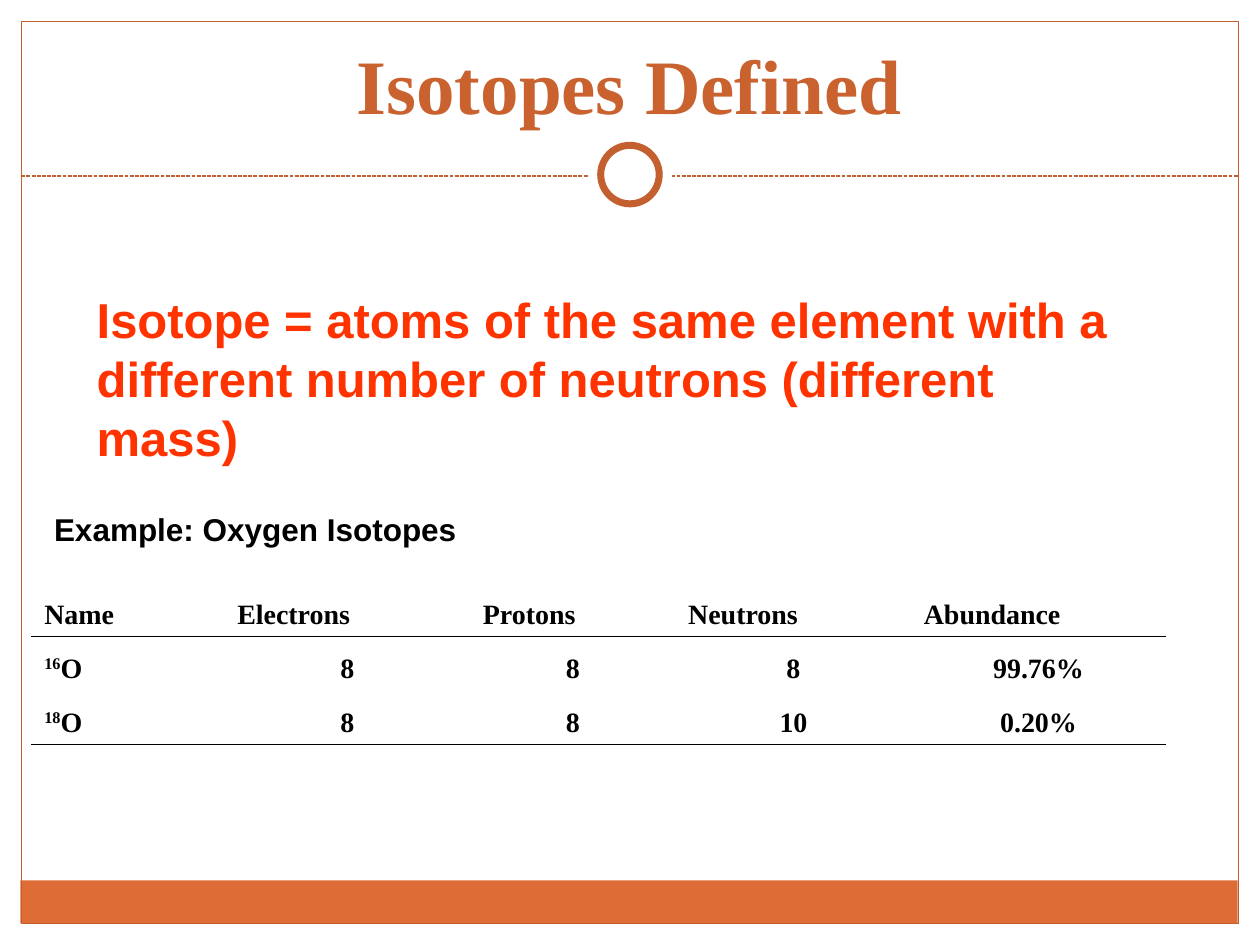
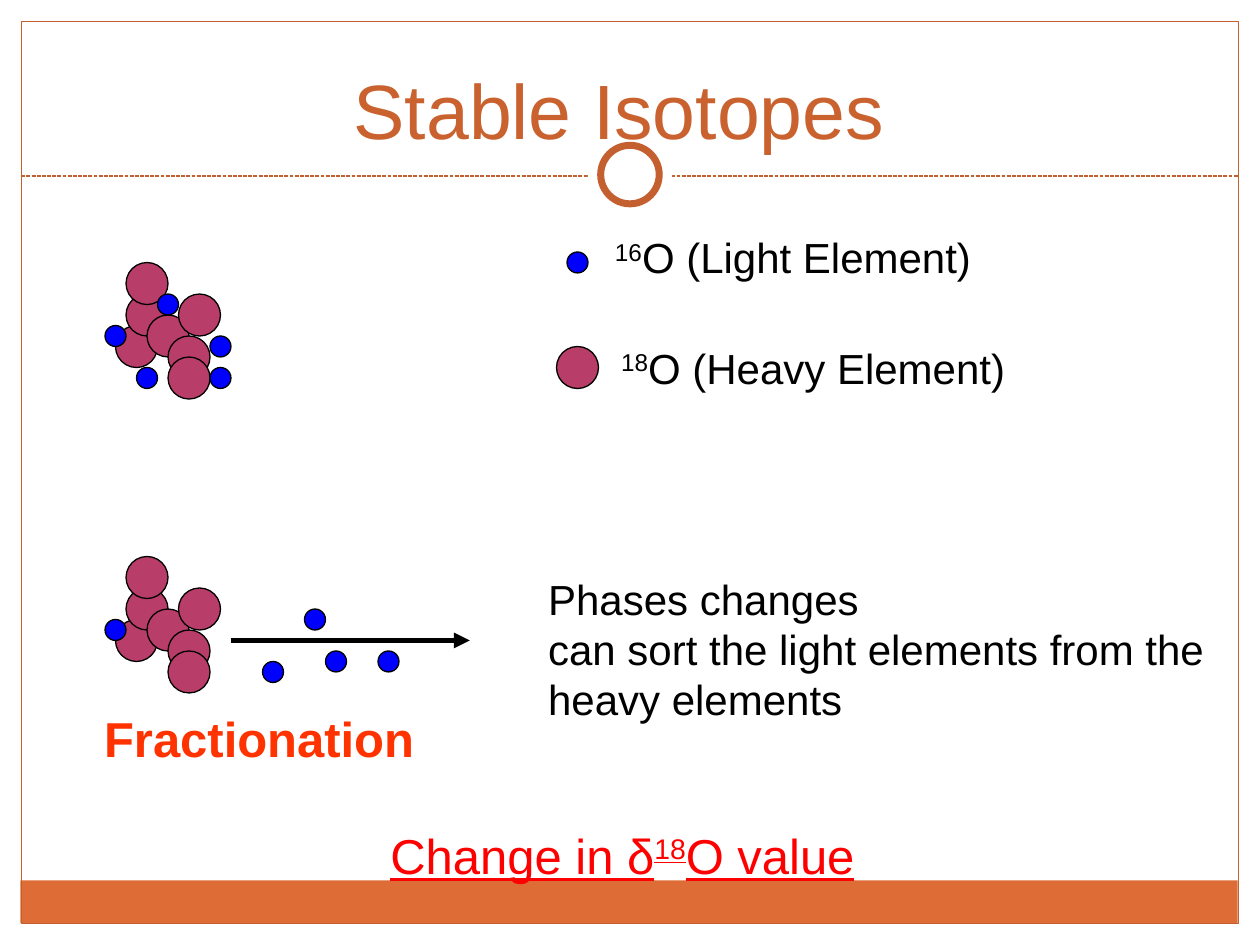
"""Build two slides on isotopes: a definition with a table, and a fractionation diagram."""
from lxml.etree import SubElement
from pptx import Presentation
from pptx.dml.color import RGBColor
from pptx.enum.dml import MSO_LINE
from pptx.enum.shapes import MSO_CONNECTOR, MSO_SHAPE
from pptx.enum.text import MSO_ANCHOR as Anchor, MSO_AUTO_SIZE as AutoSize, PP_ALIGN as Align
from pptx.oxml import parse_xml
from pptx.oxml.ns import nsdecls, qn
from pptx.util import Cm, Pt

COLORS = {
    "paper": "FFFFFF", "ink": "000000", "band": "DE6C36", "frame": "C45F30",
    "title": "C9622F", "key": "FF3300", "change": "FF0000",
    "heavy": "B83D68", "light": "0000FF",
}
SANS, SERIF = "Arial", "Times New Roman"

O16 = [("16", True), ("O", False)]
O18 = [("18", True), ("O", False)]

DEFINITION = "Isotope = atoms of the same element with a different number of neutrons (different mass)"
EXAMPLE = "Example: Oxygen Isotopes"
ISOTOPES = [
    ["Name", "Electrons", "Protons", "Neutrons", "Abundance"],
    [O16, "8", "8", "8", "99.76%"],
    [O18, "8", "8", "10", "0.20%"],
]
COLUMN_WIDTHS = [3.89, 4.95, 4.14, 4.75, 5.13]
ROW_HEIGHTS = [1.83, 1.09, 1.09]

LIGHT_LABEL = [(" 16", True), ("O (Light Element)", False)]
HEAVY_LABEL = [("18", True), ("O (Heavy Element)", False)]
PHASES = ["Phases changes", "can sort the light elements from the", "heavy elements"]
CHANGE = [("Change in δ", False), ("18", True), ("O value", False)]

GRID = Cm(2.54) / 12
ATOM_SIZES = {"heavy": 4, "light": 2}
HEAVY_CLUSTER = [(1, 6), (2, 3), (4, 5), (6, 7), (2, 0), (7, 3), (6, 9)]
MIXED_LIGHT = [(5, 3), (3, 10), (0, 6), (10, 7), (10, 10)]
SORTED_LIGHT = [(26, 9), (21, 9), (0, 6), (19, 5), (15, 10)]
CLUSTERS = [((10, 25), MIXED_LIGHT), ((10, 53), SORTED_LIGHT)]
LEGEND = [("light", 54, 24), ("heavy", 53, 33)]


def rgb(name):
    return RGBColor.from_string(COLORS[name])


def cm(*lengths):
    return [Cm(length) for length in lengths]


def write(frame, paragraphs, size, color="ink", font=SANS, bold=False, underline=None, align=Align.LEFT):
    for index, content in enumerate(paragraphs):
        paragraph = frame.add_paragraph() if index else frame.paragraphs[0]
        paragraph.alignment = align
        runs = [(content, False)] if isinstance(content, str) else content
        for text, raised in runs:
            run = paragraph.add_run()
            run.text = text
            run.font.size, run.font.name = Pt(size), font
            run.font.bold, run.font.underline = bold, underline
            run.font.color.rgb = rgb(color)
            if raised:
                run.font._element.set("baseline", "30000")


def add_label(slide, box, paragraphs, size, wrap=False, **style):
    frame = slide.shapes.add_textbox(*cm(*box)).text_frame
    frame.word_wrap = wrap
    frame.auto_size = AutoSize.SHAPE_TO_FIT_TEXT
    write(frame, paragraphs, size, **style)


def add_figure(slide, preset, box, fill=None, line=None, width=0.75):
    figure = slide.shapes.add_shape(preset, *box)
    figure.shadow.inherit = False
    if fill:
        figure.fill.solid()
        figure.fill.fore_color.rgb = rgb(fill)
    else:
        figure.fill.background()
    if line:
        figure.line.color.rgb = rgb(line)
        figure.line.width = Pt(width)
    else:
        figure.line.fill.background()
    return figure


def add_line(slide, ends, color, width, dash=None, arrow=False):
    line = slide.shapes.add_connector(MSO_CONNECTOR.STRAIGHT, *cm(*ends))
    line.line.color.rgb = rgb(color)
    line.line.width = Pt(width)
    if dash:
        line.line.dash_style = dash
    properties = line.element.spPr
    if arrow:
        SubElement(properties.get_or_add_ln(), qn("a:tailEnd"), type="triangle")
    SubElement(properties, qn("a:effectLst"))
    return line


def add_backdrop(slide, layout):
    for placeholder in list(layout.placeholders)[1:]:
        layout.shapes.element.remove(placeholder.element)
    parts = [
        add_figure(slide, MSO_SHAPE.RECTANGLE, cm(0.41, 17.75, 24.54, 0.86), fill="band"),
        add_figure(slide, MSO_SHAPE.RECTANGLE, cm(0.43, 0.43, 24.54, 18.19), line="frame"),
        add_line(slide, (0.43, 3.55, 24.97, 3.55), "frame", 0.75, dash=MSO_LINE.SQUARE_DOT),
        add_figure(slide, MSO_SHAPE.OVAL, cm(11.85, 2.67, 1.7, 1.7), fill="paper"),
        add_figure(slide, MSO_SHAPE.OVAL, cm(12.11, 2.93, 1.18, 1.18), "paper", "frame", 4),
    ]
    for part in parts:
        layout.shapes.element.append(part.element)


def set_title(slide, text, box, anchor, **style):
    title = slide.shapes.title
    title.left, title.top, title.width, title.height = cm(*box)
    frame = title.text_frame
    frame.auto_size = AutoSize.NONE
    frame.vertical_anchor = anchor
    write(frame, [text], 44, "title", align=Align.CENTER, **style)


def rule_cell(cell, side):
    rule = parse_xml(
        f'<a:{side} {nsdecls("a")} w="12700"><a:solidFill>'
        f'<a:srgbClr val="{COLORS["ink"]}"/></a:solidFill></a:{side}>')
    cell._tc.get_or_add_tcPr().insert(0, rule)


def add_isotope_table(slide):
    box = cm(0.64, 11, sum(COLUMN_WIDTHS), sum(ROW_HEIGHTS))
    table = slide.shapes.add_table(len(ISOTOPES), len(COLUMN_WIDTHS), *box).table
    table.first_row = table.horz_banding = False
    for column, width in zip(table.columns, COLUMN_WIDTHS):
        column.width = Cm(width)
    for r, (values, height) in enumerate(zip(ISOTOPES, ROW_HEIGHTS)):
        table.rows[r].height = Cm(height)
        for c, value in enumerate(values):
            cell = table.cell(r, c)
            cell.fill.background()
            cell.vertical_anchor = Anchor.BOTTOM
            align = Align.CENTER if r and c else Align.LEFT
            write(cell.text_frame, [value], 16, font=SERIF, bold=True, align=align)
            rule_cell(cell, "lnT" if r == 1 else "lnB")


def add_atom(slide, kind, column, row):
    size = ATOM_SIZES[kind]
    box = [round(GRID * units) for units in (column, row, size, size)]
    add_figure(slide, MSO_SHAPE.OVAL, box, kind, "ink")


def build_definition(slide):
    set_title(slide, "Isotopes Defined", (0.84, 0.64, 23.7, 2.11), Anchor.BOTTOM, font=SERIF, bold=True)
    add_isotope_table(slide)
    add_label(slide, (1.7, 5.72, 21.59, 3.81), [DEFINITION], 28, wrap=True, color="key", bold=True)
    add_label(slide, (0.84, 10.16, 8.89, 1.02), [EXAMPLE], 18, wrap=True, bold=True)


def build_fractionation(slide):
    set_title(slide, "Stable Isotopes ", (1.27, 0.61, 22.86, 3.18), Anchor.MIDDLE)
    for (left, top), light_atoms in CLUSTERS:
        for kind, atoms in (("heavy", HEAVY_CLUSTER), ("light", light_atoms)):
            for x, y in atoms:
                add_atom(slide, kind, left + x, top + y)
    add_line(slide, (4.65, 12.91, 9.47, 12.91), "ink", 3, arrow=True)
    for kind, column, row in LEGEND:
        add_atom(slide, kind, column, row)
    add_label(slide, (12.01, 4.55, 7.92, 1.27), [LIGHT_LABEL], 24)
    add_label(slide, (12.27, 6.78, 8.33, 1.27), [HEAVY_LABEL], 24)
    add_label(slide, (10.8, 11.43, 13.87, 3.33), PHASES, 24)
    add_label(slide, (1.85, 14.15, 6.76, 1.45), ["Fractionation"], 28, color="key", bold=True)
    add_label(slide, (7.62, 16.51, 10.8, 1.45), [CHANGE], 28, wrap=True, color="change", underline=True)


def main():
    deck = Presentation()
    deck.slide_width, deck.slide_height = cm(25.4, 19.05)
    layout = deck.slide_layouts[5]
    definition, fractionation = (deck.slides.add_slide(layout) for _ in range(2))
    add_backdrop(definition, layout)
    build_definition(definition)
    build_fractionation(fractionation)
    deck.save("out.pptx")


if __name__ == "__main__":
    main()
